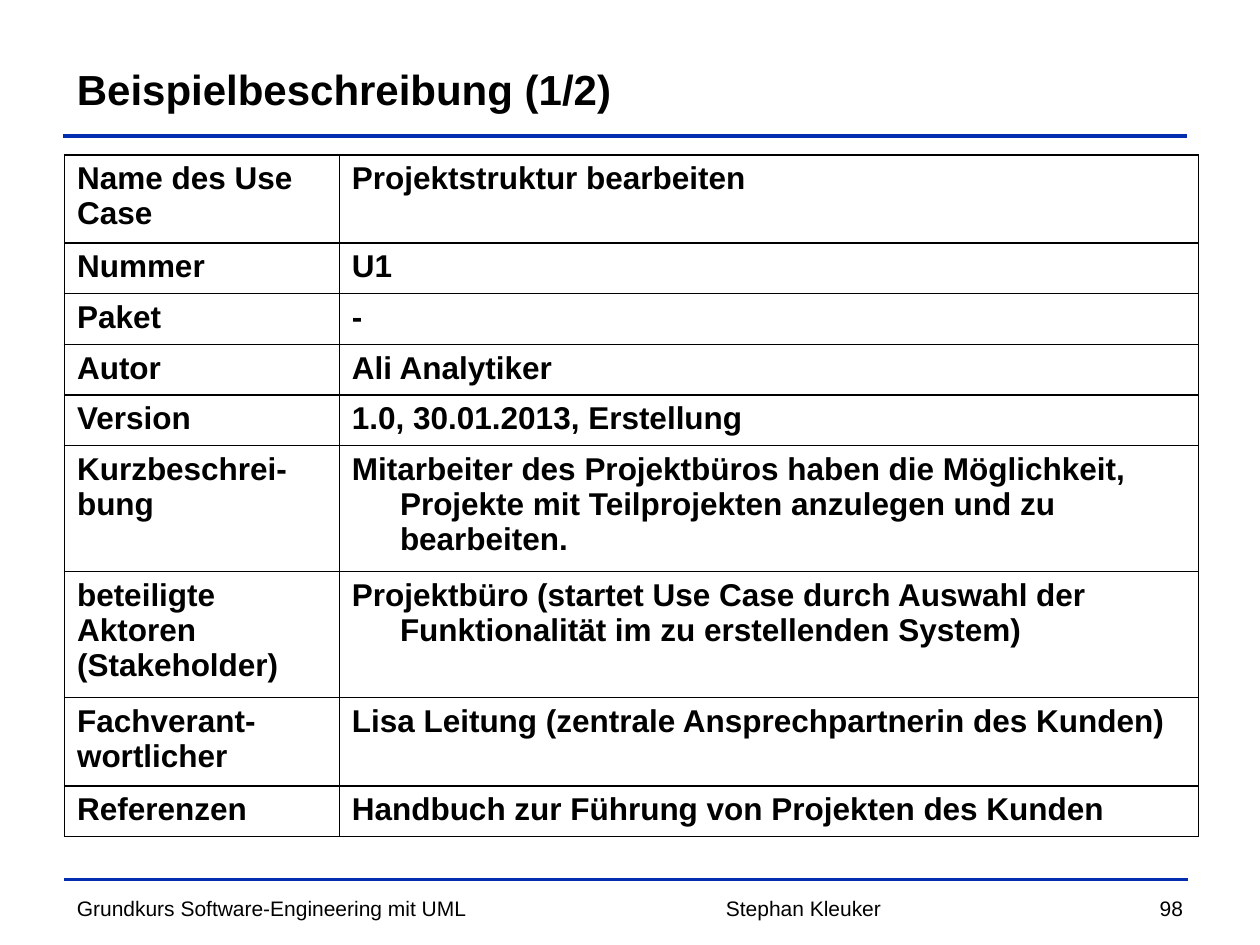
from lxml import etree
from pptx import Presentation
from pptx import util as u
from pptx.dml.color import RGBColor
from pptx.enum import shapes, text
from pptx.oxml import ns

BLACK, BLUE = "000000", "042EAE"
LINE_HEIGHT, ROW_PADDING = 0.76, 0.26
HANGING_INDENT = u.Cm(0.97)

# Label, value, number of text lines the row holds
USE_CASE = [
    ("Name des Use Case", "Projektstruktur bearbeiten", 2),
    ("Nummer", "U1", 1),
    ("Paket", "-", 1),
    ("Autor", "Ali Analytiker", 1),
    ("Version", "1.0, 30.01.2013, Erstellung", 1),
    ("Kurzbeschrei-bung", "Mitarbeiter des Projektbüros haben die Möglichkeit, "
     "Projekte mit Teilprojekten anzulegen und zu bearbeiten.", 3),
    ("beteiligte Aktoren (Stakeholder)", "Projektbüro (startet Use Case durch "
     "Auswahl der Funktionalität im zu erstellenden System)", 3),
    ("Fachverant-wortlicher",
     "Lisa Leitung (zentrale Ansprechpartnerin des Kunden)", 2),
    ("Referenzen", "Handbuch zur Führung von Projekten des Kunden", 1),
]


def color(value):
    return RGBColor.from_string(value)


def write(paragraph, content, size, bold=False, align=text.PP_ALIGN.LEFT):
    paragraph.alignment = align
    run = paragraph.add_run()
    run.text = content
    font_format = {"name": "Arial", "size": u.Pt(size), "bold": bold}
    for name, value in font_format.items():
        setattr(run.font, name, value)
    run.font.color.rgb = color(BLACK)


def add_text(slide, box, content, size, **style):
    shape = slide.shapes.add_textbox(*(u.Cm(length) for length in box))
    frame_format = {"word_wrap": True, "vertical_anchor": text.MSO_ANCHOR.MIDDLE}
    for name, value in frame_format.items():
        setattr(shape.text_frame, name, value)
    write(shape.text_frame.paragraphs[0], content, size, **style)


def add_rule(slide, left, top, width):
    rule = slide.shapes.add_connector(
        shapes.MSO_CONNECTOR.STRAIGHT,
        u.Cm(left), u.Cm(top), u.Cm(left + width), u.Cm(top))
    rule.line.color.rgb = color(BLUE)
    rule.line.width = u.Pt(2)
    etree.SubElement(rule._element.spPr, ns.qn("a:effectLst"))


def add_borders(cell):
    properties = cell._tc.get_or_add_tcPr()
    for position, side in enumerate(("lnL", "lnR", "lnT", "lnB")):
        border = etree.Element(ns.qn(f"a:{side}"), w=str(u.Pt(1)))
        fill = etree.SubElement(border, ns.qn("a:solidFill"))
        etree.SubElement(fill, ns.qn("a:srgbClr"), val=BLACK)
        properties.insert(position, border)


def add_header(slide, left, top, width, height):
    add_text(slide, (left, top, width, height),
             "Beispielbeschreibung (1/2)", 24, bold=True)
    add_rule(slide, left - 0.02, top + height - 0.13, width)


def add_use_case_table(slide, left, top, width, label_width):
    heights = [lines * LINE_HEIGHT + ROW_PADDING for _, _, lines in USE_CASE]
    table = slide.shapes.add_table(
        len(USE_CASE), 2, u.Cm(left), u.Cm(top),
        u.Cm(width), u.Cm(sum(heights))).table
    for column, column_width in zip(table.columns, (label_width, width - label_width)):
        column.width = u.Cm(column_width)
    for row, height, (label, value, _) in zip(table.rows, heights, USE_CASE):
        row.height = u.Cm(height)
        for cell, content in zip(row.cells, (label, value)):
            cell.fill.background()
            add_borders(cell)
            write(cell.text_frame.paragraphs[0], content, 18, bold=True)
        # Values continue with a hanging indent
        properties = row.cells[1].text_frame.paragraphs[0]._p.get_or_add_pPr()
        properties.set("marL", str(HANGING_INDENT))
        properties.set("indent", str(-HANGING_INDENT))


def add_footer(slide, left, top, width, height):
    add_rule(slide, left, top, width)
    text_top = top + 0.2
    add_text(slide, (left, text_top, 8.8, height),
             "Grundkurs Software-Engineering mit UML", 12)
    add_text(slide, (left + 12.4, text_top, 5, height),
             "Stephan Kleuker", 12, align=text.PP_ALIGN.CENTER)
    add_text(slide, (left + width - 5.85, text_top, 6, height),
             "98", 12, align=text.PP_ALIGN.RIGHT)


def main():
    presentation = Presentation()
    presentation.slide_width, presentation.slide_height = u.Cm(25.4), u.Cm(19.05)
    slide = presentation.slides.add_slide(presentation.slide_layouts[6])
    add_header(slide, 1.3, 0.72, 22.65, 2.15)
    add_use_case_table(slide, 1.3, 3.12, 22.86, 5.54)
    add_footer(slide, 1.3, 17.73, 22.65, 0.74)
    presentation.save("out.pptx")


if __name__ == "__main__":
    main()
